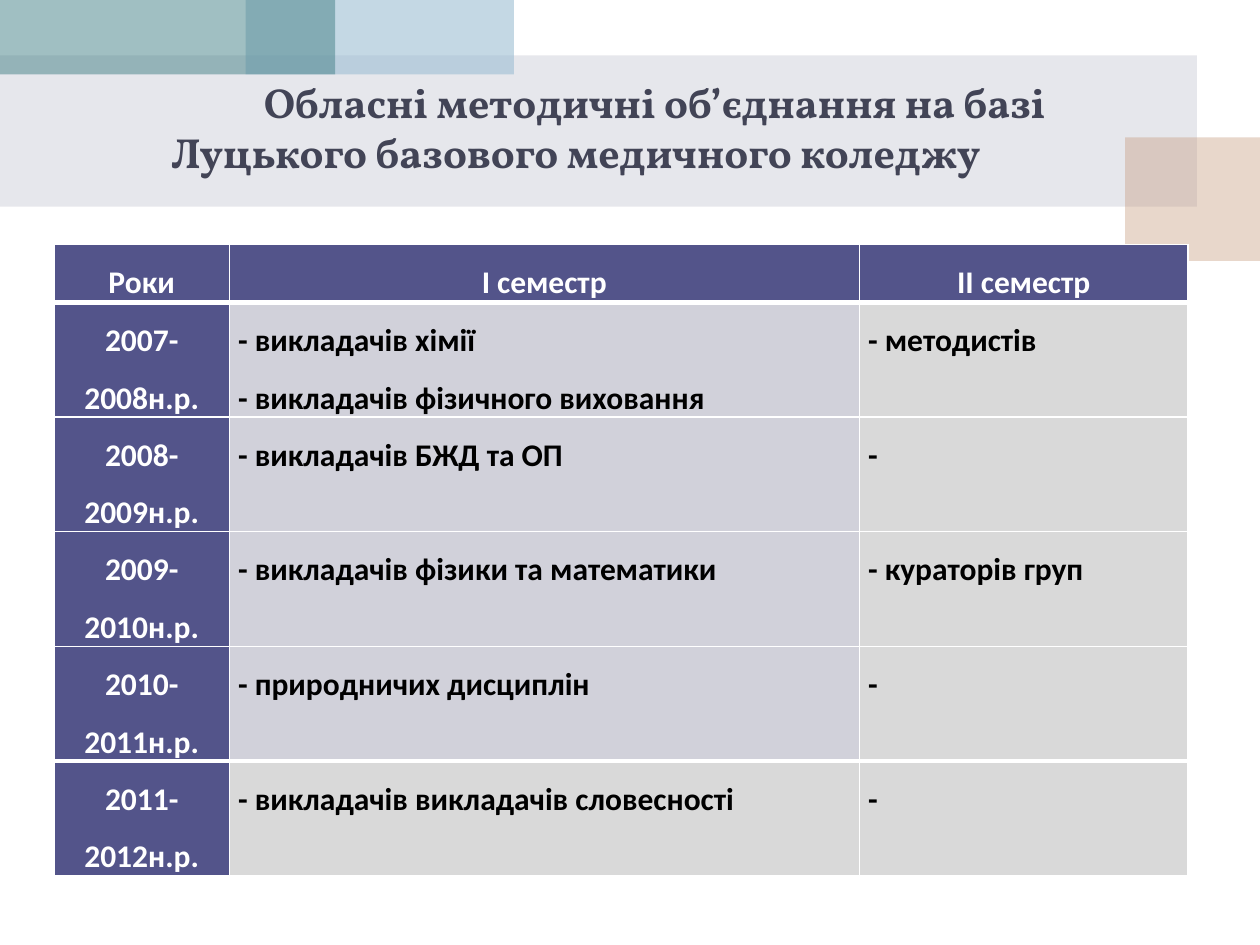
from lxml.etree import SubElement
from pptx import Presentation
from pptx.dml.color import RGBColor
from pptx.enum.shapes import MSO_SHAPE
from pptx.enum.text import MSO_ANCHOR, PP_ALIGN
from pptx.oxml.ns import qn
from pptx.util import Inches, Pt


def paint(fill, color, alpha=100):
    fill.solid()
    fill.fore_color.rgb = RGBColor.from_string(color)
    if alpha < 100:
        color_element = fill._xPr.find(qn("a:solidFill"))[0]
        SubElement(color_element, qn("a:alpha"), val=str(alpha * 1000))


def add_border(cell, side, width):
    properties = cell._tc.get_or_add_tcPr()
    line = SubElement(properties, qn(f"a:ln{side}"), w=str(Pt(width)))
    line_fill = SubElement(line, qn("a:solidFill"))
    SubElement(line_fill, qn("a:srgbClr"), val="FFFFFF")


presentation = Presentation()
presentation.slide_width = Inches(10)
presentation.slide_height = Inches(7.5)
slide = presentation.slides.add_slide(presentation.slide_layouts[6])

bands = [
    (0, 0.44, 9.5, 1.2, "AEB0C1", 30),
    (8.93, 1.09, 1.07, 0.98, "C69B7E", 40),
    (1.95, 0, 2.13, 0.59, "9DBED3", 60),
    (0, 0, 2.66, 0.59, "438086", 50),
]
for left, top, width, height, color, alpha in bands:
    band = slide.shapes.add_shape(
        MSO_SHAPE.RECTANGLE, Inches(left), Inches(top), Inches(width), Inches(height))
    band.shadow.inherit = False
    band.line.fill.background()
    paint(band.fill, color, alpha)

title = slide.shapes.add_textbox(Inches(0.12), Inches(0.52), Inches(8.9), Inches(0.97))
title.text_frame.word_wrap = True
title.text_frame.vertical_anchor = MSO_ANCHOR.MIDDLE
title.text_frame.text = "Обласні методичні об’єднання на базі Луцького базового медичного коледжу"
paragraph = title.text_frame.paragraphs[0]
paragraph.alignment = PP_ALIGN.CENTER
paragraph._p.get_or_add_pPr().set("indent", str(Inches(1.25)))
font = paragraph.runs[0].font
font.name = "Vollkorn"
font.size = Pt(24)
font.bold = True
font.color.rgb = RGBColor.from_string("424456")

rows = [
    ("Роки", "І семестр", "ІІ семестр"),
    ("2007-2008н.р.", "- викладачів хімії\n- викладачів фізичного виховання", "- методистів"),
    ("2008-2009н.р.", "- викладачів БЖД та ОП", "-"),
    ("2009-2010н.р.", "- викладачів фізики та математики", "- кураторів груп"),
    ("2010-2011н.р.", "- природничих дисциплін", "-"),
    ("2011-2012н.р.", "- викладачів викладачів словесності", "-"),
]
last_row = len(rows) - 1
table = slide.shapes.add_table(
    len(rows), 3, Inches(0.43), Inches(1.94), Inches(9), Inches(5.01)).table
for column, width in zip(table.columns, (1.39, 5, 2.61)):
    column.width = Inches(width)

for row_index, texts in enumerate(rows):
    table.rows[row_index].height = Inches(0.91 if row_index else 0.46)
    for column_index, text in enumerate(texts):
        cell = table.cell(row_index, column_index)
        heading = row_index == 0 or column_index == 0
        cell.margin_left = cell.margin_right = Inches(0.07)
        cell.margin_top = cell.margin_bottom = 0
        add_border(cell, "L", 1)
        add_border(cell, "R", 1)
        add_border(cell, "T", 3 if row_index in (1, last_row) else 1)
        add_border(cell, "B", 3 if row_index in (0, last_row - 1) else 1)
        if heading:
            paint(cell.fill, "53548A")
        elif column_index == 1 and row_index < last_row:
            paint(cell.fill, "D1D1DA")
        else:
            paint(cell.fill, "D9D9D9")
        cell.text_frame.text = text
        for paragraph in cell.text_frame.paragraphs:
            paragraph.alignment = PP_ALIGN.CENTER if heading else PP_ALIGN.JUSTIFY
            paragraph.line_spacing = 1.5
            font = paragraph.runs[0].font
            font.name = "Calibri"
            font.size = Pt(18)
            font.bold = True
            font.color.rgb = RGBColor.from_string("FFFFFF" if heading else "000000")

presentation.save("out.pptx")
